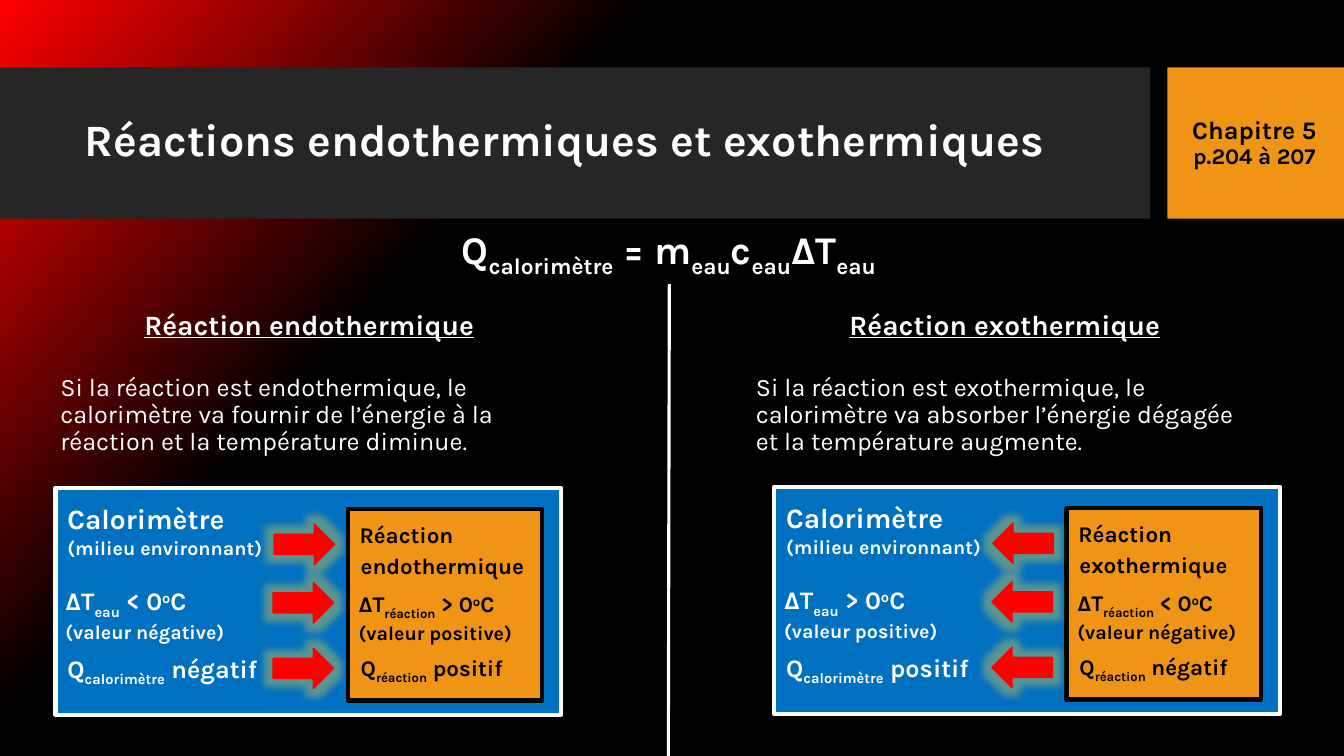
from lxml import etree
from pptx import Presentation
from pptx.dml.color import RGBColor
from pptx.enum import shapes, text
from pptx.oxml import ns
from pptx.util import Pt

COLOURS = {
    "red": "FF0000",
    "black": "000000",
    "white": "FFFFFF",
    "grey": "262626",
    "orange": "F09415",
    "blue": "0070C0",
    "glow": "E0D050",
}
BASELINES = {"_": "-25000", "^": "30000"}
ARROWS = [(156.2, 25.9), (155.5, 67.7), (155.5, 114.5)]


def colour(name):
    return RGBColor.from_string(COLOURS[name])


def paint_background(page):
    fill = page.background.fill
    fill.gradient()
    fill.gradient_angle = 318
    for stop, name, position in zip(fill.gradient_stops, ("red", "black"), (0, 0.32)):
        stop.color.rgb = colour(name)
        stop.position = position


def add_block(page, left, top, width, height, fill, line=None, weight=3,
              kind=shapes.MSO_SHAPE.RECTANGLE):
    block = page.shapes.add_shape(kind, Pt(left), Pt(top), Pt(width), Pt(height))
    block.shadow.inherit = False
    block.fill.solid()
    block.fill.fore_color.rgb = colour(fill)
    if line:
        block.line.color.rgb = colour(line)
        block.line.width = Pt(weight)
    else:
        block.line.fill.background()
    return block


def add_arrow(page, left, top, rotation):
    arrow = add_block(page, left, top, 43.2, 28.8, "red", "red", 1,
                      shapes.MSO_SHAPE.RIGHT_ARROW)
    arrow.rotation = rotation
    effects = arrow._element.spPr.find(ns.qn("a:effectLst"))
    glow = etree.SubElement(effects, ns.qn("a:glow"), rad=str(Pt(11)))
    tint = etree.SubElement(glow, ns.qn("a:srgbClr"), val=COLOURS["glow"])
    etree.SubElement(tint, ns.qn("a:alpha"), val="40000")


def add_divider(page, start, end):
    line = page.shapes.add_connector(shapes.MSO_CONNECTOR.STRAIGHT,
                                     *map(Pt, start + end))
    line.line.color.rgb = colour("white")
    line.line.width = Pt(2.25)
    etree.SubElement(line._element.spPr, ns.qn("a:effectLst"))


def add_text(page, content, left, top, width, height, sizes=(18,), ink="white",
             bold=True, underline=False, centred=False, middle=False, spacing=1.0):
    """Lines are split at newlines; between bars, _ lowers and ^ raises a span."""
    box = page.shapes.add_textbox(Pt(left), Pt(top), Pt(width), Pt(height))
    frame = box.text_frame
    frame.word_wrap = True
    frame.vertical_anchor = text.MSO_ANCHOR.MIDDLE if middle else text.MSO_ANCHOR.TOP
    for index, (line, size) in enumerate(zip(content.split("\n"), sizes)):
        para = frame.add_paragraph() if index else frame.paragraphs[0]
        para.alignment = text.PP_ALIGN.CENTER if centred else text.PP_ALIGN.LEFT
        para.line_spacing = spacing
        for piece in line.split("|"):
            span = para.add_run()
            span.text = piece.lstrip("_^")
            span.font.name = "Karla"
            span.font.size = Pt(size)
            span.font.bold = bold
            span.font.underline = underline
            span.font.color.rgb = colour(ink)
            if piece[0] in BASELINES:
                span._r.get_or_add_rPr().set("baseline", BASELINES[piece[0]])


def add_explanation(page, left, heading, body):
    add_text(page, heading, left, 205.9, 370, 54.7, sizes=(20,), underline=True,
             centred=True, middle=True, spacing=0.9)
    add_text(page, body, left, 260.6, 370, 72, bold=False, middle=True, spacing=0.9)


def add_calorimeter(page, left, top, reaction, water, inside, rotation):
    water_sign, water_value = water
    inside_sign, inside_value = inside
    add_block(page, left, top, 361.4, 162, "blue", "white")
    add_block(page, left + 208.8, top + 15.1, 139, 136.8, "orange", "black")
    for x, y in ARROWS:
        add_arrow(page, left + x, top + y, rotation)

    outer_labels = [
        ("Calorimètre\n(milieu environnant)", 1.4, 6.5, (20, 14)),
        (f"ΔT|_eau| {water_sign} 0|^o|C\n(valeur {water_value}e)".replace("fe)", "ve)"),
         0, 66.2, (18, 14)),
        (f"Q|_calorimètre| {water_value}", 1.4, 114.5, (18,)),
    ]
    inner_labels = [
        ("Réaction", 210.2, 20.2, (16,)),
        (reaction, 211, 42.5, (16,)),
        (f"ΔT|_réaction| {inside_sign} 0|^o|C\n(valeur {inside_value}e)".replace("fe)", "ve)"),
         209.5, 69.8, (16, 14)),
        (f"Q|_réaction| {inside_value}", 211, 115.2, (16,)),
    ]
    for labels, width, ink in ((outer_labels, 186.5, "white"),
                               (inner_labels, 139, "black")):
        for content, x, y, sizes in labels:
            add_text(page, content, left + x, top + y, width, 28.8 * len(sizes),
                     sizes=sizes, ink=ink)


def main():
    deck = Presentation()
    deck.slide_width, deck.slide_height = Pt(960), Pt(540)
    page = deck.slides.add_slide(deck.slide_layouts[6])
    paint_background(page)

    add_block(page, 0, 48.2, 821.5, 108, "grey")
    add_block(page, 833.8, 48.2, 126.2, 108, "orange")
    add_text(page, "Réactions endothermiques et exothermiques", 53.3, 59, 756.7, 85,
             sizes=(32,), middle=True, spacing=0.9)
    add_text(page, "Chapitre 5\np.204 à 207", 832.3, 48.2, 127.4, 108.7,
             sizes=(18, 16), ink="black", centred=True, middle=True, spacing=0.9)
    add_text(page, "Q|_calorimètre| = m|_eau|c|_eau|ΔT|_eau", 23.8, 157, 908, 46,
             sizes=(28,), centred=True, middle=True)
    add_divider(page, (478.1, 203), (477.4, 540))

    add_explanation(page, 36, "Réaction endothermique",
                    "Si la réaction est endothermique, le calorimètre va fournir "
                    "de l’énergie à la réaction et la température diminue.")
    add_explanation(page, 532.8, "Réaction exothermique",
                    "Si la réaction est exothermique, le calorimètre va absorber "
                    "l’énergie dégagée et la température augmente.")

    negative, positive = ("<", "négatif"), (">", "positif")
    add_calorimeter(page, 39.6, 348.5, "endothermique", negative, positive, 0)
    add_calorimeter(page, 553, 347.8, "exothermique", positive, negative, 180)
    deck.save("out.pptx")


if __name__ == "__main__":
    main()
